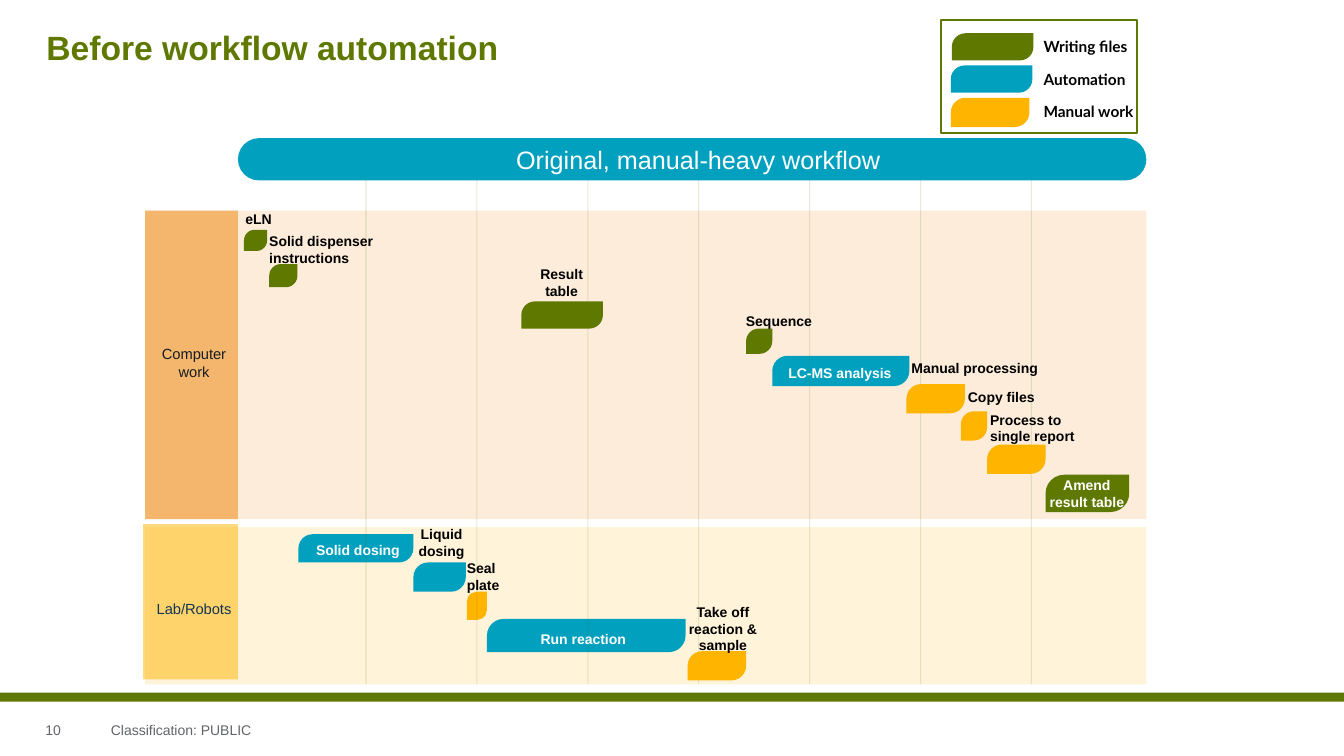
from dataclasses import dataclass

from lxml.etree import SubElement
from pptx import Presentation
from pptx.dml.color import RGBColor
from pptx.enum.shapes import MSO_CONNECTOR, MSO_SHAPE
from pptx.enum.text import MSO_ANCHOR, PP_ALIGN
from pptx.oxml.ns import qn
from pptx.util import Inches, Pt

GREEN, TEAL, AMBER, ORANGE = "5F7800", "00A0BE", "FFB400", "EB8200"
BLACK, WHITE, GREY = "000000", "FFFFFF", "626469"
LEFT, CENTER = PP_ALIGN.LEFT, PP_ALIGN.CENTER


@dataclass
class Box:
    left: float
    top: float
    width: float
    height: float

    def lengths(self) -> list:
        return [Inches(v) for v in (self.left, self.top, self.width, self.height)]


@dataclass
class Bar:
    box: Box
    color: str


@dataclass
class Label:
    text: str
    box: Box
    align: PP_ALIGN = CENTER
    color: str = BLACK
    size: float = 10
    bold: bool = True
    font: str = "Arial"
    anchor: MSO_ANCHOR = MSO_ANCHOR.MIDDLE


@dataclass
class Lane:
    box: Box
    header: Box
    color: str
    label: Label


def set_color(format_with_color, color: str, opacity: int = 100) -> None:
    """Set the colour of a solid fill, a line or a font."""
    format_with_color.color.rgb = RGBColor.from_string(color)


def set_opacity(properties, percent: int) -> None:
    for color in properties.iter(qn("a:srgbClr")):
        SubElement(color, qn("a:alpha"), val=str(percent * 1000))


def add_block(shapes, kind: MSO_SHAPE, box: Box, color: str, opacity: int = 100):
    shape = shapes.add_shape(kind, *box.lengths())
    shape.shadow.inherit = False
    shape.fill.solid()
    shape.fill.fore_color.rgb = RGBColor.from_string(color)
    shape.line.fill.background()
    if opacity < 100:
        set_opacity(shape.element.spPr, opacity)
    return shape


def add_bar(shapes, bar: Bar) -> None:
    shape = add_block(shapes, MSO_SHAPE.ROUND_2_DIAG_RECTANGLE, bar.box, bar.color)
    shape.adjustments[0] = 0.5
    shape.adjustments[1] = 0


def write_label(shape, label: Label) -> None:
    frame = shape.text_frame
    frame.word_wrap = True
    frame.vertical_anchor = label.anchor
    frame.margin_left = frame.margin_right = frame.margin_top = frame.margin_bottom = 0
    frame.text = label.text
    for paragraph in frame.paragraphs:
        paragraph.alignment = label.align
        for run in paragraph.runs:
            run.font.name = label.font
            run.font.size = Pt(label.size)
            run.font.bold = label.bold
            set_color(run.font, label.color)


def add_label(shapes, label: Label) -> None:
    write_label(shapes.add_textbox(*label.box.lengths()), label)


def add_grid_line(shapes, x: float, top: float, bottom: float) -> None:
    line = shapes.add_connector(
        MSO_CONNECTOR.STRAIGHT, Inches(x), Inches(top), Inches(x), Inches(bottom))
    set_color(line.line, GREEN)
    line.line.width = Pt(0.75)
    set_opacity(line.element.spPr, 15)
    SubElement(line.element.spPr, qn("a:effectLst"))


LANES = [
    Lane(Box(1.44, 2.09, 9.93, 3.06), Box(1.44, 2.09, 0.92, 3.06), ORANGE,
         Label("Computer work", Box(1.44, 3.5, 0.97, 0.2), color="161C23", size=10.5, bold=False)),
    Lane(Box(1.44, 5.23, 9.93, 1.56), Box(1.42, 5.2, 0.94, 1.54), AMBER,
         Label("Lab/Robots", Box(1.44, 5.94, 0.97, 0.2), color="153451", size=10.5, bold=False)),
]

BARS_BEHIND_GRID = [
    Bar(Box(7.66, 3.53, 1.36, 0.3), TEAL),
    Bar(Box(2.96, 5.3, 1.14, 0.28), TEAL),
    Bar(Box(4.1, 5.58, 0.52, 0.29), TEAL),
    Bar(Box(4.83, 6.14, 1.97, 0.33), TEAL),
    Bar(Box(4.63, 5.87, 0.2, 0.28), AMBER),
]

BARS_OVER_GRID = [
    Bar(Box(2.42, 2.28, 0.23, 0.21), GREEN),
    Bar(Box(2.67, 2.62, 0.28, 0.23), GREEN),
    Bar(Box(5.17, 2.99, 0.81, 0.27), GREEN),
    Bar(Box(7.4, 3.26, 0.26, 0.25), GREEN),
    Bar(Box(8.99, 3.81, 0.58, 0.29), AMBER),
    Bar(Box(9.53, 4.08, 0.26, 0.29), AMBER),
    Bar(Box(9.79, 4.41, 0.58, 0.29), AMBER),
    Bar(Box(10.37, 4.71, 0.83, 0.37), GREEN),
    Bar(Box(6.82, 6.46, 0.58, 0.29), AMBER),
]

STEP_LABELS = [
    Label("eLN", Box(2.36, 2.04, 0.41, 0.26)),
    Label("Solid dispenser\ninstructions", Box(2.67, 2.29, 1.05, 0.37), LEFT),
    Label("Result table", Box(5.22, 2.67, 0.7, 0.27)),
    Label("Sequence", Box(7.37, 3, 0.71, 0.37)),
    Label("LC-MS analysis", Box(7.8, 3.51, 1.06, 0.37), color=WHITE),
    Label("Manual processing", Box(9.04, 3.47, 1.33, 0.37), LEFT),
    Label("Copy files", Box(9.6, 3.75, 1.19, 0.37), LEFT),
    Label("Process to single report", Box(9.82, 4.06, 0.96, 0.37), LEFT),
    Label("Amend\vresult table", Box(10.3, 4.71, 0.96, 0.37), color=WHITE),
    Label("Solid dosing", Box(3.07, 5.3, 0.96, 0.32), color=WHITE),
    Label("Liquid dosing", Box(4.13, 5.2, 0.5, 0.37)),
    Label("Seal plate", Box(4.63, 5.53, 0.37, 0.37), LEFT),
    Label("Run reaction", Box(5.06, 6.15, 1.45, 0.37), color=WHITE),
    Label("Take off reaction & sample", Box(6.63, 6.05, 1.08, 0.37)),
]

LEGEND = [
    ("Writing files", Bar(Box(9.44, 0.33, 0.81, 0.27), GREEN)),
    ("Automation", Bar(Box(9.43, 0.65, 0.81, 0.27), TEAL)),
    ("Manual work", Bar(Box(9.43, 0.97, 0.78, 0.29), AMBER)),
]


def main() -> None:
    presentation = Presentation()
    presentation.slide_width, presentation.slide_height = Inches(13.33), Inches(7.5)
    slide = presentation.slides.add_slide(presentation.slide_layouts[5])
    shapes = slide.shapes

    # Title
    title = shapes.title
    title_box = Box(0.46, 0.31, 12.44, 0.79)
    title.left, title.top, title.width, title.height = title_box.lengths()
    write_label(title, Label("Before workflow automation", title_box, LEFT, GREEN, 24,
                             anchor=MSO_ANCHOR.TOP))
    title.text_frame.paragraphs[0].line_spacing = 0.9

    # Lanes, grid and workflow band
    for lane in LANES:
        add_block(shapes, MSO_SHAPE.RECTANGLE, lane.box, lane.color, 15)
        add_block(shapes, MSO_SHAPE.RECTANGLE, lane.header, lane.color, 50)
        add_label(shapes, lane.label)
    for bar in BARS_BEHIND_GRID:
        add_bar(shapes, bar)
    band = add_block(shapes, MSO_SHAPE.ROUNDED_RECTANGLE, Box(2.36, 1.37, 9.01, 0.42), TEAL)
    band.adjustments[0] = 0.5
    for column in range(7):
        add_grid_line(shapes, 3.63 + 1.1 * column, 1.79, 6.79)
    add_label(shapes, Label("Original, manual-heavy workflow", Box(2.65, 1.43, 8.55, 0.3),
                            color=WHITE, size=18, bold=False, anchor=MSO_ANCHOR.TOP))

    # Workflow steps
    for bar in BARS_OVER_GRID:
        add_bar(shapes, bar)
    for label in STEP_LABELS:
        add_label(shapes, label)

    # Legend
    legend = shapes.add_group_shape().shapes
    frame = add_block(legend, MSO_SHAPE.RECTANGLE, Box(9.33, 0.2, 1.95, 1.12), WHITE)
    set_color(frame.line, GREEN)
    frame.line.width = Pt(1.5)
    for text, bar in LEGEND:
        add_bar(legend, bar)
        add_label(legend, Label(text, Box(10.35, bar.box.top, 1.54, 0.27), LEFT,
                                size=11, font="Lato"))

    # Footer
    add_block(shapes, MSO_SHAPE.RECTANGLE, Box(0, 6.87, 13.33, 0.09), GREEN)
    for text, left, width in (("10", 0.45, 0.66), ("Classification: PUBLIC", 1.1, 8.39)):
        add_label(shapes, Label(text, Box(left, 6.98, width, 0.52), LEFT, GREY, bold=False))

    presentation.save("out.pptx")


if __name__ == "__main__":
    main()
